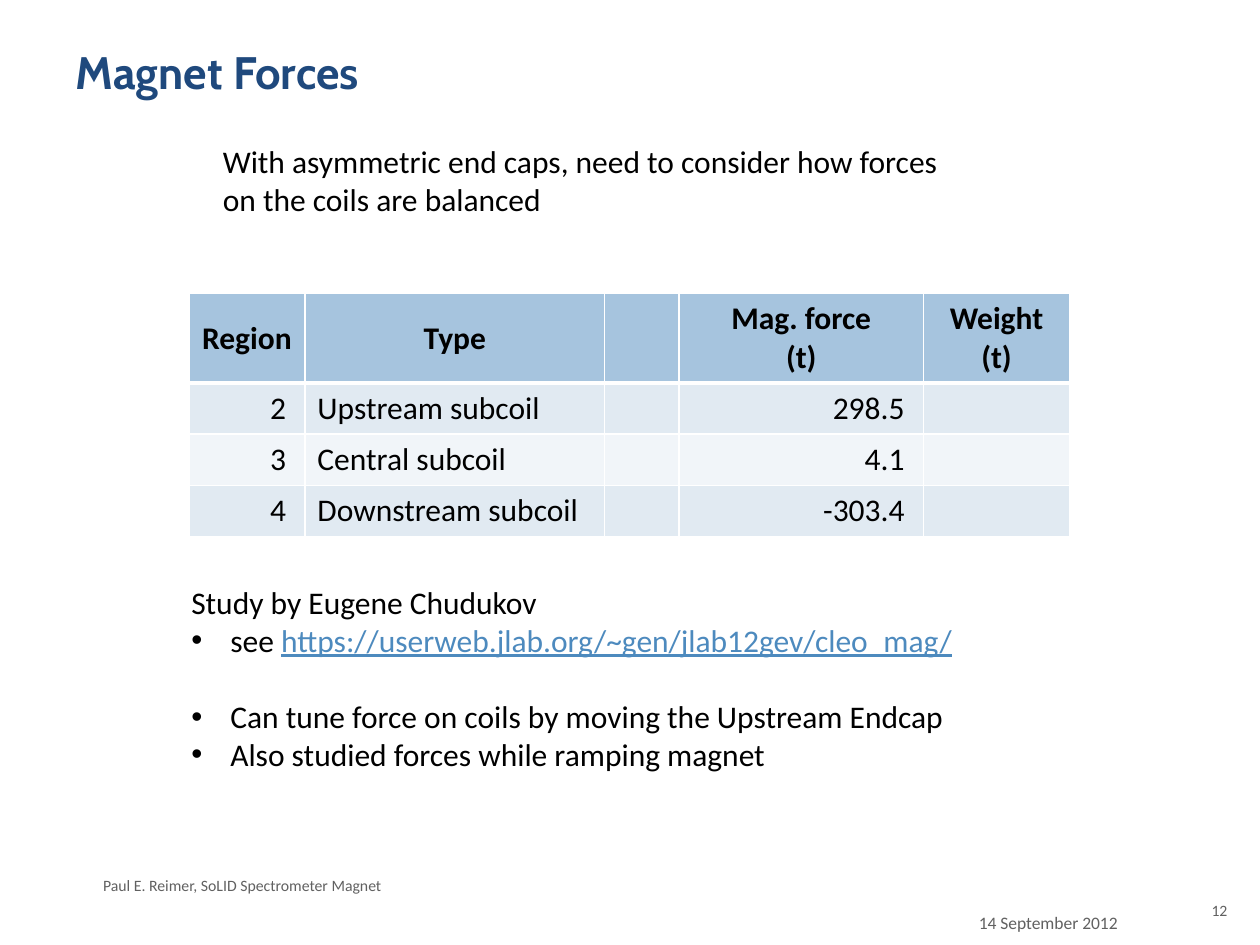
from dataclasses import dataclass
from typing import Optional

from lxml import etree
from pptx import Presentation
from pptx.dml.color import RGBColor
from pptx.enum import text as t
from pptx.oxml import ns
from pptx.util import Inches, Pt

NAVY = RGBColor(0x1F, 0x49, 0x7D)
BLACK = RGBColor(0, 0, 0)
GRAY = RGBColor(0x61, 0x61, 0x61)
LINK = RGBColor(0x4D, 0x8A, 0xBE)
HEAD = RGBColor(0xA6, 0xC4, 0xDE)
BANDS = (RGBColor(0xE1, 0xEA, 0xF2), RGBColor(0xF1, 0xF5, 0xF9))
LEFT, MID, RIGHT = t.PP_ALIGN.LEFT, t.PP_ALIGN.CENTER, t.PP_ALIGN.RIGHT


@dataclass
class Box:
    x: float
    y: float
    w: float
    h: float
    lines: list[str]
    size: float = 18
    color: RGBColor = BLACK
    align: Optional[t.PP_ALIGN] = LEFT


def style(para, size: float, color: RGBColor, bold: bool = False,
          face: str = "Calibri") -> None:
    font = para.font
    font.name, font.size, font.bold = face, Pt(size), bold
    font.color.rgb = color


def fill_text(frame, lines: list[str], size: float, color: RGBColor,
              align: t.PP_ALIGN, bold: bool = False) -> None:
    for i, line in enumerate(lines):
        para = frame.add_paragraph() if i else frame.paragraphs[0]
        para.add_run().text = line
        para.alignment = align
        style(para, size, color, bold)


def add_box(slide, box: Box):
    shape = slide.shapes.add_textbox(
        Inches(box.x), Inches(box.y), Inches(box.w), Inches(box.h))
    frame = shape.text_frame
    frame.word_wrap = True
    fill_text(frame, box.lines, box.size, box.color, box.align)
    return frame


def add_bullet(para) -> None:
    props = para._p.get_or_add_pPr()
    indent = Inches(0.31)
    props.set("marL", str(indent))
    props.set("indent", str(-indent))
    etree.SubElement(props, ns.qn("a:buFont")).set("typeface", "Arial")
    etree.SubElement(props, ns.qn("a:buChar")).set("char", "•")


def add_edges(cell, top: float = 1, bottom: float = 1) -> None:
    props = cell._tc.get_or_add_tcPr()
    widths = {"lnL": 1, "lnR": 1, "lnT": top, "lnB": bottom}
    for i, (tag, width) in enumerate(widths.items()):
        line = etree.Element(ns.qn(f"a:{tag}"), w=str(Pt(width)))
        fill = etree.SubElement(line, ns.qn("a:solidFill"))
        etree.SubElement(fill, ns.qn("a:srgbClr"), val="FFFFFF")
        props.insert(i, line)


def add_forces(slide) -> None:
    rows = [
        ["Region", "Type", "", "Mag. force\n(t)", "Weight\n(t)"],
        ["2", "Upstream subcoil", "", "298.5", ""],
        ["3", "Central subcoil", "", "4.1", ""],
        ["4", "Downstream subcoil", "", "-303.4", ""],
    ]
    widths = [0.92, 2.38, 0.59, 1.94, 1.16]
    heights = [0.7] + [0.4] * 3
    aligns = [RIGHT, LEFT, LEFT, RIGHT, LEFT]
    table = slide.shapes.add_table(
        len(rows), len(widths), Inches(1.5), Inches(2.33),
        Inches(sum(widths)), Inches(sum(heights))).table
    for col, width in zip(table.columns, widths):
        col.width = Inches(width)
    for r, (row, height) in enumerate(zip(rows, heights)):
        table.rows[r].height = Inches(height)
        for c, value in enumerate(row):
            cell = table.cell(r, c)
            cell.vertical_anchor = t.MSO_ANCHOR.MIDDLE
            cell.fill.solid()
            cell.fill.fore_color.rgb = BANDS[(r - 1) % 2] if r else HEAD
            align = aligns[c] if r else MID
            if align == RIGHT:
                cell.margin_right = Inches(0.15)
            fill_text(cell.text_frame, value.split("\n"), 18, BLACK,
                      align, bold=r == 0)
            add_edges(cell, top=3 if r == 1 else 1, bottom=1 if r else 3)


def add_study(slide) -> None:
    frame = add_box(slide, Box(1.42, 4.58, 6.67, 1.62, [
        "Study by Eugene Chudukov",
        "see ",
        "Can tune force on coils by moving the Upstream Endcap",
        "Also studied forces while ramping magnet",
    ]))
    see, tune, ramp = frame.paragraphs[1:]
    for para in (see, tune, ramp):
        # Bullet elements go ahead of the default font
        props = para._p.get_or_add_pPr()
        for old in list(props):
            props.remove(old)
        add_bullet(para)
        style(para, 18, BLACK)
    tune.space_before = Pt(22)
    link = see.add_run()
    link.text = "https://userweb.jlab.org/~gen/jlab12gev/cleo_mag/"
    link.font.color.rgb = LINK
    link.font.underline = True


def main() -> None:
    deck = Presentation()
    deck.slide_width, deck.slide_height = Inches(10), Inches(7.5)
    slide = deck.slides.add_slide(deck.slide_layouts[5])

    # Title
    title = slide.shapes.title
    title.left, title.top = Inches(0.5), Inches(0.3)
    title.width, title.height = Inches(9), Inches(0.78)
    frame = title.text_frame
    frame.text = "Magnet Forces"
    frame.auto_size = t.MSO_AUTO_SIZE.NONE
    frame.vertical_anchor = t.MSO_ANCHOR.TOP
    frame.paragraphs[0].alignment = LEFT
    style(frame.paragraphs[0], 26, NAVY, True, "Cabin")

    # Table, footer and body text
    add_forces(slide)
    for box in (
        Box(7.67, 7.19, 1.5, 0.23, ["14 September 2012"], 10, GRAY),
        Box(0.72, 6.9, 6.5, 0.25,
            ["Paul E. Reimer, SoLID Spectrometer Magnet"], 9, GRAY),
        Box(9.42, 7.1, 0.42, 0.4, ["12"], 9, GRAY, RIGHT),
        Box(1.67, 1.08, 6.17, 1.01,
            ["With asymmetric end caps, need to consider how forces "
             "on the coils are balanced"]),
    ):
        add_box(slide, box)
    add_study(slide)
    deck.save("out.pptx")


if __name__ == "__main__":
    main()
